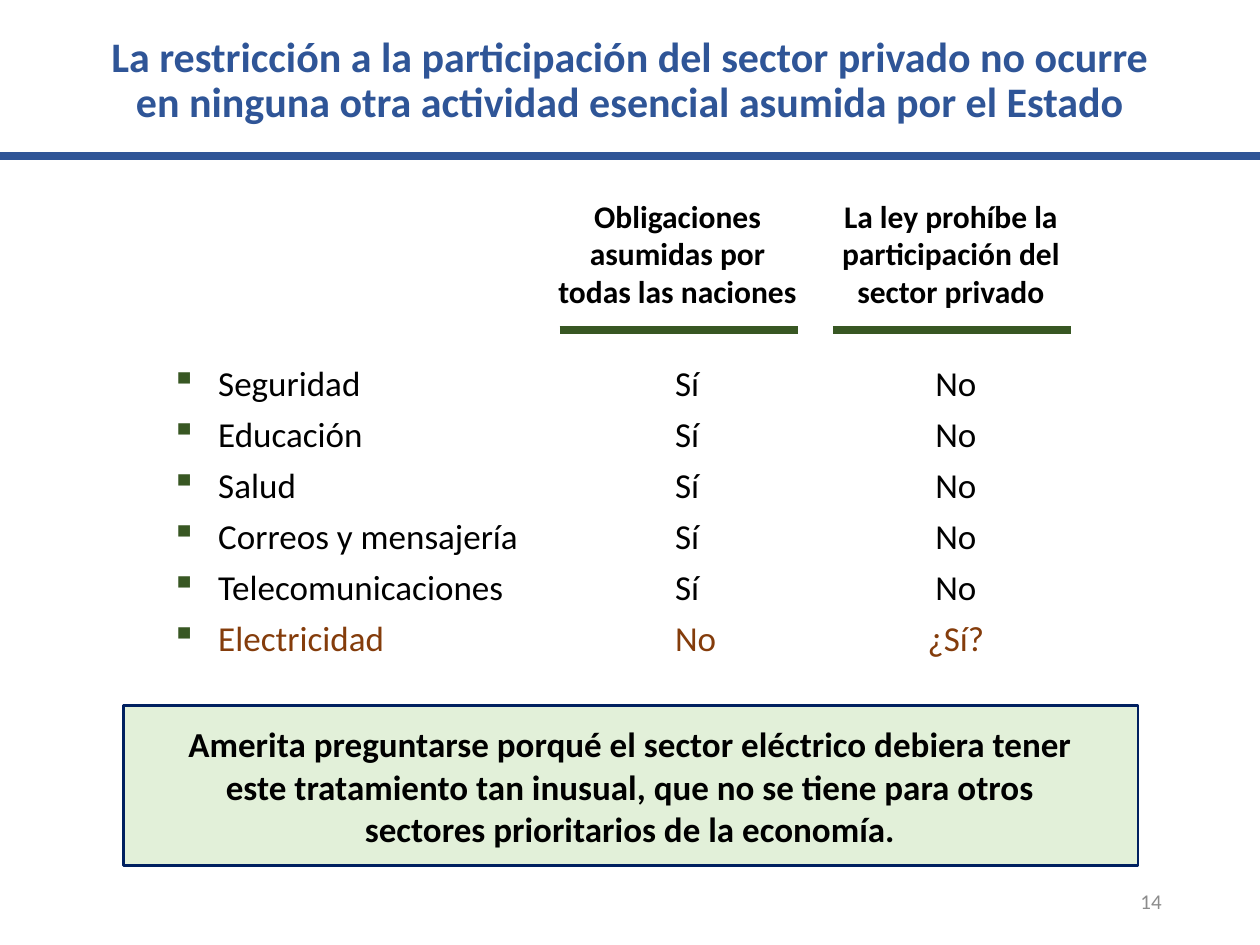
from lxml.etree import SubElement
from pptx import Presentation
from pptx.dml.color import RGBColor
from pptx.enum.shapes import MSO_CONNECTOR, MSO_SHAPE
from pptx.enum.text import MSO_ANCHOR, PP_ALIGN
from pptx.oxml.ns import qn
from pptx.util import Cm, Pt

TITLE = ("La restricción a la participación del sector privado no ocurre "
         "en ninguna otra actividad esencial asumida por el Estado")
HEADINGS = ["Obligaciones asumidas por todas las naciones",
            "La ley prohíbe la participación del sector privado"]
ACTIVITIES = [
    ("Seguridad", "Sí", "No"),
    ("Educación", "Sí", "No"),
    ("Salud", "Sí", "No"),
    ("Correos y mensajería", "Sí", "No"),
    ("Telecomunicaciones", "Sí", "No"),
    ("Electricidad", "No", "¿Sí?"),
]
EXCEPTION = "Electricidad"
CONCLUSION = ["Amerita preguntarse porqué el sector eléctrico debiera tener",
              "este tratamiento tan inusual, que no se tiene para otros",
              "sectores prioritarios de la economía."]
PAGE_NUMBER = "14"

BLUE, NAVY, GREEN, PALE_GREEN = "2F5597", "002060", "385723", "E2F0D9"
BLACK, BROWN, GRAY = "000000", "843C0B", "8C8C8C"
TAB_STOPS = [(10.16, "l"), (15.82, "ctr")]
BULLET_INDENT = Cm(0.95)
HEADING_LEFT, HEADING_STEP, HEADING_WIDTH = 10.97, 5.51, 5.38
RULE_INSET, RULE_WIDTH, RULE_TOP = 0.31, 4.8, 6.66


def color(value):
    return RGBColor.from_string(value)


def set_font(paragraph, size, tint, bold=False):
    font = paragraph.font
    font.name, font.size, font.bold = "Calibri", Pt(size), bold
    font.color.rgb = color(tint)


def add_frame(left, top, width, height, anchor=MSO_ANCHOR.TOP):
    box = slide.shapes.add_textbox(Cm(left), Cm(top), Cm(width), Cm(height))
    frame = box.text_frame
    frame.word_wrap = True
    frame.vertical_anchor = anchor
    return frame


def add_text(text, place, size, tint, bold=False, align=PP_ALIGN.CENTER,
             anchor=MSO_ANCHOR.TOP):
    paragraph = add_frame(*place, anchor).paragraphs[0]
    paragraph.text = text
    paragraph.alignment = align
    set_font(paragraph, size, tint, bold)
    return paragraph


def add_rule(left, top, width, tint):
    rule = slide.shapes.add_connector(
        MSO_CONNECTOR.STRAIGHT, Cm(left), Cm(top), Cm(left + width), Cm(top))
    rule.line.color.rgb = color(tint)
    rule.line.width = Pt(4.5)
    SubElement(rule._element.spPr, qn("a:effectLst"))


def add_bullet_and_tabs(paragraph):
    props = paragraph._p.get_or_add_pPr()
    props.set("marL", str(BULLET_INDENT))
    props.set("indent", str(-BULLET_INDENT))
    SubElement(SubElement(props, qn("a:buClr")), qn("a:srgbClr"), val=GREEN)
    SubElement(props, qn("a:buChar"), char="▪")
    tabs = SubElement(props, qn("a:tabLst"))
    for position, align in TAB_STOPS:
        SubElement(tabs, qn("a:tab"), pos=str(Cm(position)), algn=align)


prs = Presentation()
prs.slide_width, prs.slide_height = Cm(25.4), Cm(19.05)
slide = prs.slides.add_slide(prs.slide_layouts[6])

add_rule(0, 3.15, 25.4, BLUE)
panel = slide.shapes.add_shape(
    MSO_SHAPE.RECTANGLE, Cm(2.49), Cm(14.22), Cm(20.45), Cm(3.23))
panel.shadow.inherit = False
panel.fill.solid()
panel.fill.fore_color.rgb = color(PALE_GREEN)
panel.line.color.rgb = color(NAVY)
panel.line.width = Pt(1.5)

title = add_text(TITLE, (1.75, 0.58, 21.9, 2.13), 24, BLUE, True,
                 anchor=MSO_ANCHOR.MIDDLE)
title.line_spacing = 0.9

activity_list = add_frame(3.2, 7.32, 19.51, 7.34)
for index, activity in enumerate(ACTIVITIES):
    row = activity_list.add_paragraph() if index else activity_list.paragraphs[0]
    row.text = "\t".join(activity)
    row.line_spacing = 0.8
    row.space_before = Pt(10)
    set_font(row, 20, BROWN if activity[0] == EXCEPTION else BLACK)
    add_bullet_and_tabs(row)

for index, heading in enumerate(HEADINGS):
    left = HEADING_LEFT + index * HEADING_STEP
    add_text(heading, (left, 3.84, HEADING_WIDTH, 2.57), 18, BLACK, True)
    add_rule(left + RULE_INSET, RULE_TOP, RULE_WIDTH, GREEN)

add_text("\v".join(CONCLUSION), (2.69, 14.45, 20.02, 2.82), 20, BLACK, True)
add_text(PAGE_NUMBER, (19.48, 17.65, 4.19, 1.02), 12, GRAY,
         align=PP_ALIGN.RIGHT, anchor=MSO_ANCHOR.MIDDLE)

prs.save("out.pptx")
